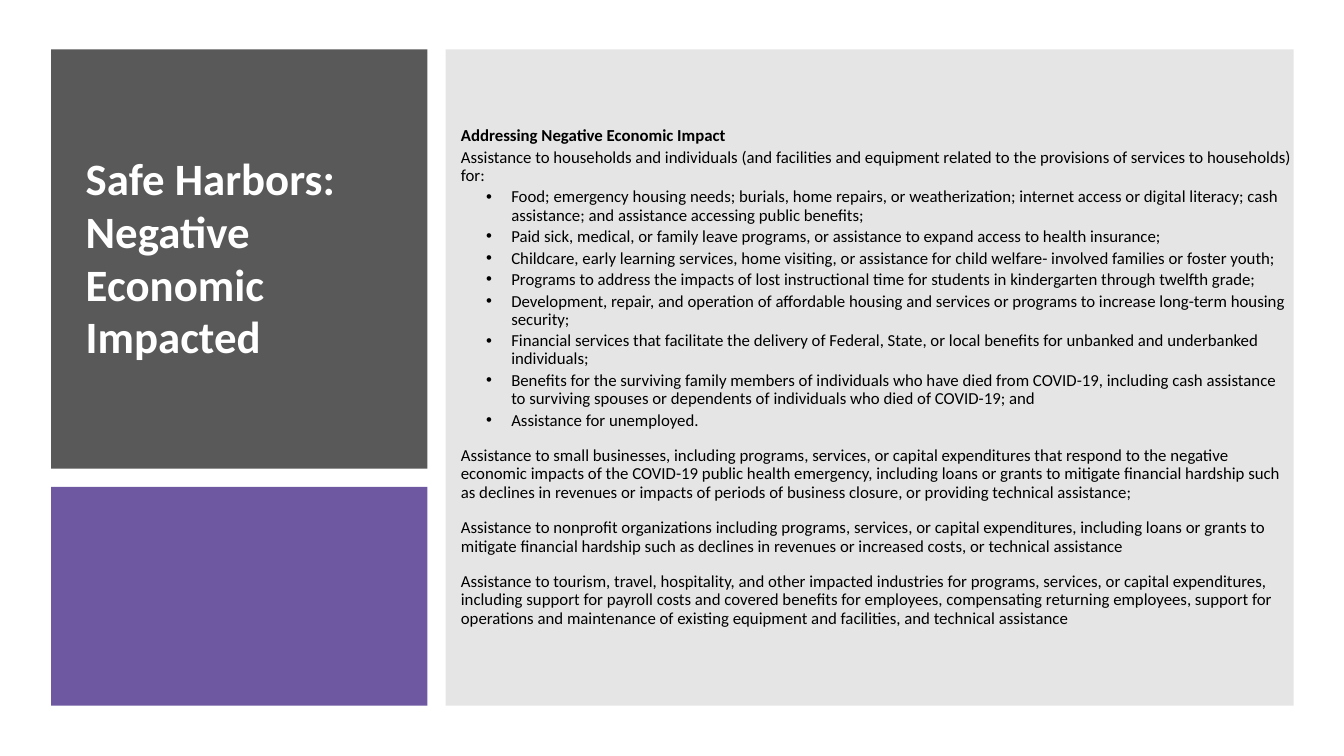
from dataclasses import dataclass

from lxml.etree import SubElement
from pptx import Presentation
from pptx.dml.color import RGBColor
from pptx.enum.shapes import MSO_SHAPE as Preset
from pptx.enum.text import MSO_ANCHOR as Anchor
from pptx.oxml.ns import qn
from pptx.slide import Slide
from pptx.text.text import _Paragraph as Paragraph
from pptx.util import Inches, Length, Pt

SLIDE_WIDTH, SLIDE_HEIGHT = Inches(13.33), Inches(7.5)


@dataclass(frozen=True)
class Theme:
    font: str = "Calibri"
    title_size: int = 32
    body_size: int = 12
    dark: str = "595959"
    accent: str = "6E58A1"
    panel: str = "808080"
    title_text: str = "FFFFFF"
    body_text: str = "000000"


@dataclass(frozen=True)
class Area:
    """Left and width in percent of slide width, top and height of its height."""
    left: float
    top: float
    width: float
    height: float

    def lengths(self) -> list[Length]:
        return [Length(round(SLIDE_WIDTH * self.left / 100)),
                Length(round(SLIDE_HEIGHT * self.top / 100)),
                Length(round(SLIDE_WIDTH * self.width / 100)),
                Length(round(SLIDE_HEIGHT * self.height / 100))]


@dataclass(frozen=True)
class Block:
    area: Area
    color: str
    opacity: int = 100


@dataclass(frozen=True)
class Line:
    text: str
    size: int
    color: str
    bold: bool = False
    bullet: bool = False
    space_before: float = 0
    line_spacing: float = 0.9


THEME = Theme()
TIGHT_GAP = 0.2 * THEME.body_size
SECTION_GAP = 12.6

# Grid: a narrow and a wide column between shared top and bottom edges
TOP, FULL_HEIGHT = 6.53, 86.8
SIDE_LEFT, SIDE_WIDTH = 3.8, 28
MAIN_LEFT, MAIN_WIDTH = 33.16, 63.09
DARK_HEIGHT, ROW_GAP = 55.47, 2.4
ACCENT_TOP = TOP + DARK_HEIGHT + ROW_GAP
TEXT_INSET = 1.13

BLOCKS = [
    Block(Area(SIDE_LEFT, TOP, SIDE_WIDTH, DARK_HEIGHT), THEME.dark),
    Block(Area(SIDE_LEFT, ACCENT_TOP, SIDE_WIDTH, TOP + FULL_HEIGHT - ACCENT_TOP),
          THEME.accent),
    Block(Area(MAIN_LEFT, TOP, MAIN_WIDTH, FULL_HEIGHT), THEME.panel, 20),
]
TITLE_AREA = Area(6.38, 10.67, 23.33, 47.2)
BODY_AREA = Area(MAIN_LEFT + TEXT_INSET, TOP, 61.89, FULL_HEIGHT)

TITLE = "Safe Harbors:\nNegative Economic Impacted"
HEADING = "Addressing Negative Economic Impact"
INTRO = ("Assistance to households and individuals (and facilities and equipment "
         "related to the provisions of services to households) for:")
BULLETS = [
    "Food; emergency housing needs; burials, home repairs, or weatherization; internet "
    "access or digital literacy; cash assistance; and assistance accessing public benefits;",
    "Paid sick, medical, or family leave programs, or assistance to expand access to "
    "health insurance;",
    "Childcare, early learning services, home visiting, or assistance for child welfare- "
    "involved families or foster youth;",
    "Programs to address the impacts of lost instructional time for students in "
    "kindergarten through twelfth grade;",
    "Development, repair, and operation of affordable housing and services or programs "
    "to increase long-term housing security;",
    "Financial services that facilitate the delivery of Federal, State, or local benefits "
    "for unbanked and underbanked individuals;",
    "Benefits for the surviving family members of individuals who have died from COVID-19, "
    "including cash assistance to surviving spouses or dependents of individuals who died "
    "of COVID-19; and",
    "Assistance for unemployed.",
]
SECTIONS = [
    "Assistance to small businesses, including programs, services, or capital expenditures "
    "that respond to the negative economic impacts of the COVID-19 public health emergency, "
    "including loans or grants to mitigate financial hardship such as declines in revenues "
    "or impacts of periods of business closure, or providing technical assistance;",
    "Assistance to nonprofit organizations including programs, services, or capital "
    "expenditures, including loans or grants to mitigate financial hardship such as "
    "declines in revenues or increased costs, or technical assistance",
    "Assistance to tourism, travel, hospitality, and other impacted industries for programs, "
    "services, or capital expenditures, including support for payroll costs and covered "
    "benefits for employees, compensating returning employees, support for operations and "
    "maintenance of existing equipment and facilities, and technical assistance",
]


def body_line(text: str, gap: float = TIGHT_GAP, bold: bool = False,
              bullet: bool = False) -> Line:
    return Line(text, THEME.body_size, THEME.body_text, bold, bullet, gap)


def draw_block(slide: Slide, block: Block) -> None:
    shape = slide.shapes.add_shape(Preset.RECTANGLE, *block.area.lengths())
    shape.shadow.inherit = False
    shape.line.fill.background()
    shape.fill.solid()
    shape.fill.fore_color.rgb = RGBColor.from_string(block.color)
    if block.opacity < 100:
        color = shape.fill._xPr.find(".//" + qn("a:srgbClr"))
        SubElement(color, qn("a:alpha"), val=str(block.opacity * 1000))


def add_bullet(paragraph: Paragraph) -> None:
    properties = paragraph._p.get_or_add_pPr()
    properties.set("marL", str(Inches(0.5)))
    properties.set("indent", str(Inches(-0.25)))
    SubElement(properties, qn("a:buFont"), typeface="Arial")
    SubElement(properties, qn("a:buChar"), char="•")


def draw_text(slide: Slide, area: Area, lines: list[Line]) -> None:
    frame = slide.shapes.add_textbox(*area.lengths()).text_frame
    frame_format = {"word_wrap": True, "vertical_anchor": Anchor.MIDDLE,
                    "margin_left": 0, "margin_right": 0,
                    "margin_top": Inches(0.07), "margin_bottom": Inches(0.07)}
    for name, value in frame_format.items():
        setattr(frame, name, value)
    for index, line in enumerate(lines):
        paragraph = frame.add_paragraph() if index else frame.paragraphs[0]
        paragraph.text = line.text
        paragraph.line_spacing = line.line_spacing
        paragraph.space_before = Pt(line.space_before)
        if line.bullet:
            add_bullet(paragraph)
        font_format = {"name": THEME.font, "size": Pt(line.size), "bold": line.bold}
        for run in paragraph.runs:
            for name, value in font_format.items():
                setattr(run.font, name, value)
            run.font.color.rgb = RGBColor.from_string(line.color)


def main() -> None:
    presentation = Presentation()
    presentation.slide_width, presentation.slide_height = SLIDE_WIDTH, SLIDE_HEIGHT
    slide = presentation.slides.add_slide(presentation.slide_layouts[6])

    # Background blocks
    for block in BLOCKS:
        draw_block(slide, block)

    # Title
    draw_text(slide, TITLE_AREA, [Line(TITLE, THEME.title_size, THEME.title_text,
                                       bold=True, line_spacing=0.98)])

    # Body
    draw_text(slide, BODY_AREA, [
        body_line(HEADING, gap=0, bold=True),
        body_line(INTRO),
        *(body_line(text, bullet=True) for text in BULLETS),
        *(body_line(text, gap=SECTION_GAP) for text in SECTIONS),
    ])
    presentation.save("out.pptx")


if __name__ == "__main__":
    main()
